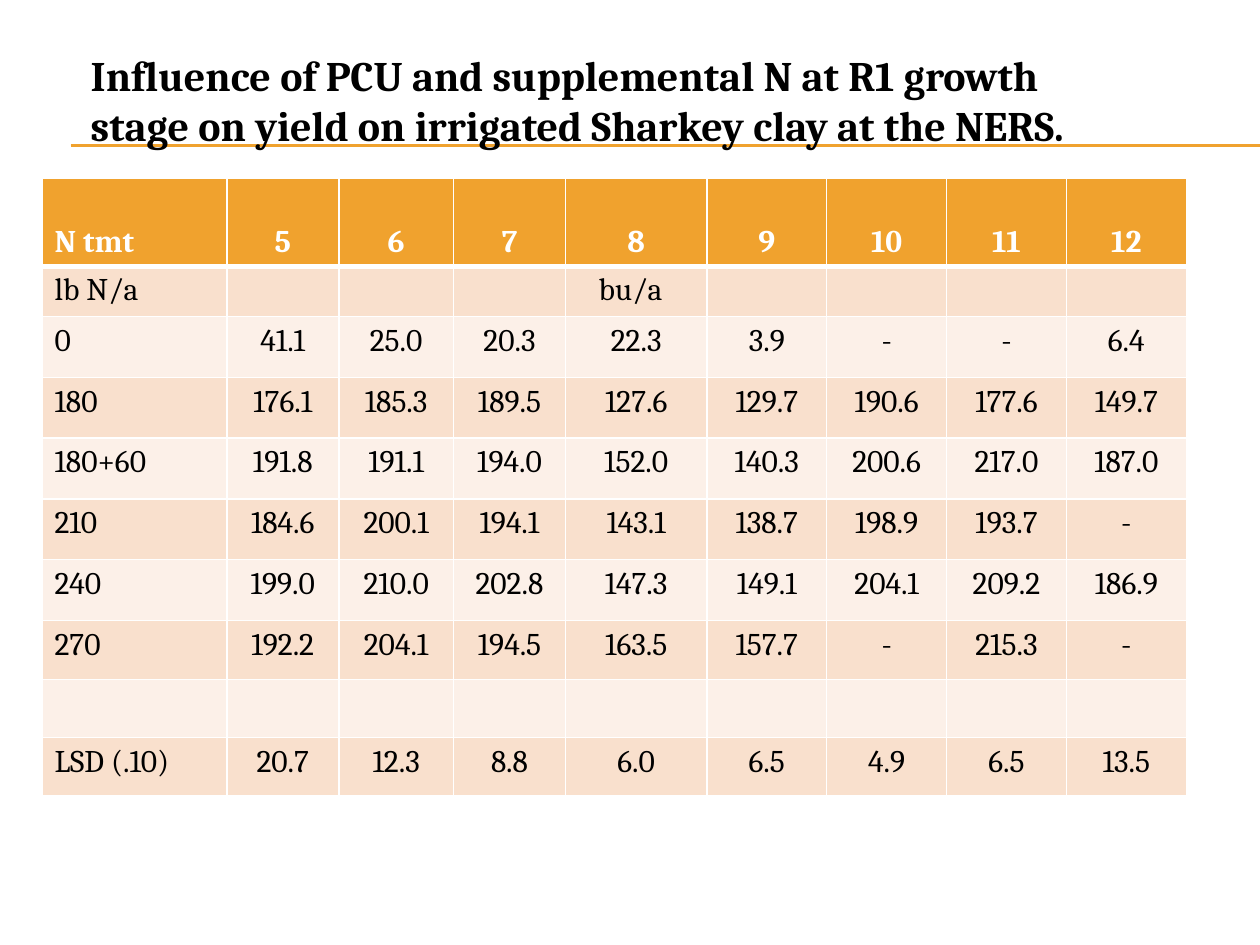
import pptx
import pptx.util
import pptx.dml.color
import pptx.enum.shapes
import pptx.enum.text
import pptx.oxml
import pptx.oxml.ns

Pt = pptx.util.Pt
RGBColor = pptx.dml.color.RGBColor
ANCHOR = pptx.enum.text.MSO_ANCHOR
ALIGN = pptx.enum.text.PP_ALIGN

ORANGE = RGBColor(0xF0, 0xA2, 0x2E)
PEACH = RGBColor(0xF9, 0xE0, 0xCD)
CREAM = RGBColor(0xFC, 0xF0, 0xE8)
WHITE = RGBColor(0xFF, 0xFF, 0xFF)
BLACK = RGBColor(0, 0, 0)

TITLE = ("Influence of PCU and supplemental N at R1 growth stage "
         "on yield on irrigated Sharkey clay at the NERS.")
UNIT = "bu/a"
ROWS = [
    ["N tmt", "5", "6", "7", "8", "9", "10", "11", "12"],
    ["lb N/a", "", "", "", UNIT, "", "", "", ""],
    ["0", "41.1", "25.0", "20.3", "22.3", "3.9", "-", "-", "6.4"],
    ["180", "176.1", "185.3", "189.5", "127.6", "129.7", "190.6", "177.6", "149.7"],
    ["180+60", "191.8", "191.1", "194.0", "152.0", "140.3", "200.6", "217.0", "187.0"],
    ["210", "184.6", "200.1", "194.1", "143.1", "138.7", "198.9", "193.7", "-"],
    ["240", "199.0", "210.0", "202.8", "147.3", "149.1", "204.1", "209.2", "186.9"],
    ["270", "192.2", "204.1", "194.5", "163.5", "157.7", "-", "215.3", "-"],
    [""] * 9,
    ["LSD (.10)", "20.7", "12.3", "8.8", "6.0", "6.5", "4.9", "6.5", "13.5"],
]
COL_WIDTHS = [105.6, 64, 65.6, 64, 80.8] + [68.5] * 4
ROW_HEIGHTS = [50.2, 28.8] + [34.7] * 5 + [33.8, 33.2, 33.2]


def add_run(p, text, **formats):
    """Add a Cambria run with the given size, weight and colour."""
    r = p.add_run()
    r.text = text
    color = formats.pop("color")
    for name, value in {"name": "Cambria", **formats}.items():
        setattr(r.font, name, value)
    r.font.color.rgb = color


def add_rules(s, x, y, width):
    """Draw the pair of thin rules under the title."""
    for top in (y, y + 0.6):
        line = s.shapes.add_connector(pptx.enum.shapes.MSO_CONNECTOR.STRAIGHT,
                                      Pt(x), Pt(top), Pt(x + width), Pt(top))
        line.line.color.rgb = ORANGE
        line.line.width = Pt(0.75)
        sp_pr = line._element.spPr
        sp_pr.append(pptx.oxml.parse_xml(
            f"<a:effectLst {pptx.oxml.ns.nsdecls('a')}/>"))


def add_title(s, x, y, width, height):
    """Place the slide title in its box."""
    tf = s.shapes.add_textbox(Pt(x), Pt(y), Pt(width), Pt(height)).text_frame
    tf.word_wrap = True
    tf.auto_size = pptx.enum.text.MSO_AUTO_SIZE.SHAPE_TO_FIT_TEXT
    add_run(tf.paragraphs[0], TITLE, size=Pt(24), bold=True, color=BLACK)


def set_borders(cell, **widths):
    """Give a cell white borders of the given widths in points."""
    tc_pr = cell._tc.get_or_add_tcPr()
    for side in "LRTB":
        tc_pr.append(pptx.oxml.parse_xml(
            f"<a:ln{side} {pptx.oxml.ns.nsdecls('a')} w=\"{Pt(widths.get(side, 1))}\">"
            f"<a:solidFill><a:srgbClr val=\"{WHITE}\"/></a:solidFill></a:ln{side}>"))


def fill_cell(cell, row, col, text):
    """Style one table cell by its position and write its text."""
    header = row == 0
    set_borders(cell, B=3 if header else 1, T=3 if row == 1 else 1)
    cell.fill.solid()
    cell.fill.fore_color.rgb = ORANGE if header else (CREAM, PEACH)[row % 2]
    cell.vertical_anchor = ANCHOR.BOTTOM if header else ANCHOR.TOP
    p = cell.text_frame.paragraphs[0]
    if text == UNIT:
        cell.margin_left = Pt(19)
    elif col:
        p.alignment = ALIGN.CENTER
    if text:
        add_run(p, text, size=Pt(18), bold=header, color=WHITE if header else BLACK)


def add_yield_table(s, x, y):
    """Place the yield table with its top left corner at x, y."""
    table = s.shapes.add_table(len(ROWS), len(COL_WIDTHS), Pt(x), Pt(y),
                               Pt(sum(COL_WIDTHS)), Pt(sum(ROW_HEIGHTS))).table
    for column, width in zip(table.columns, COL_WIDTHS):
        column.width = Pt(width)
    for row, height in zip(table.rows, ROW_HEIGHTS):
        row.height = Pt(height)
    for i, values in enumerate(ROWS):
        for j, text in enumerate(values):
            fill_cell(table.cell(i, j), i, j, text)


def main():
    """Build the slide and save it."""
    prs = pptx.Presentation()
    prs.slide_width, prs.slide_height = Pt(720), Pt(540)
    s = prs.slides.add_slide(prs.slide_layouts[6])
    add_rules(s, 40.4, 82.8, 679.6)
    add_title(s, 44.8, 24.5, 612, 65.5)
    add_yield_table(s, 24, 102)
    prs.save("out.pptx")


if __name__ == "__main__":
    main()
